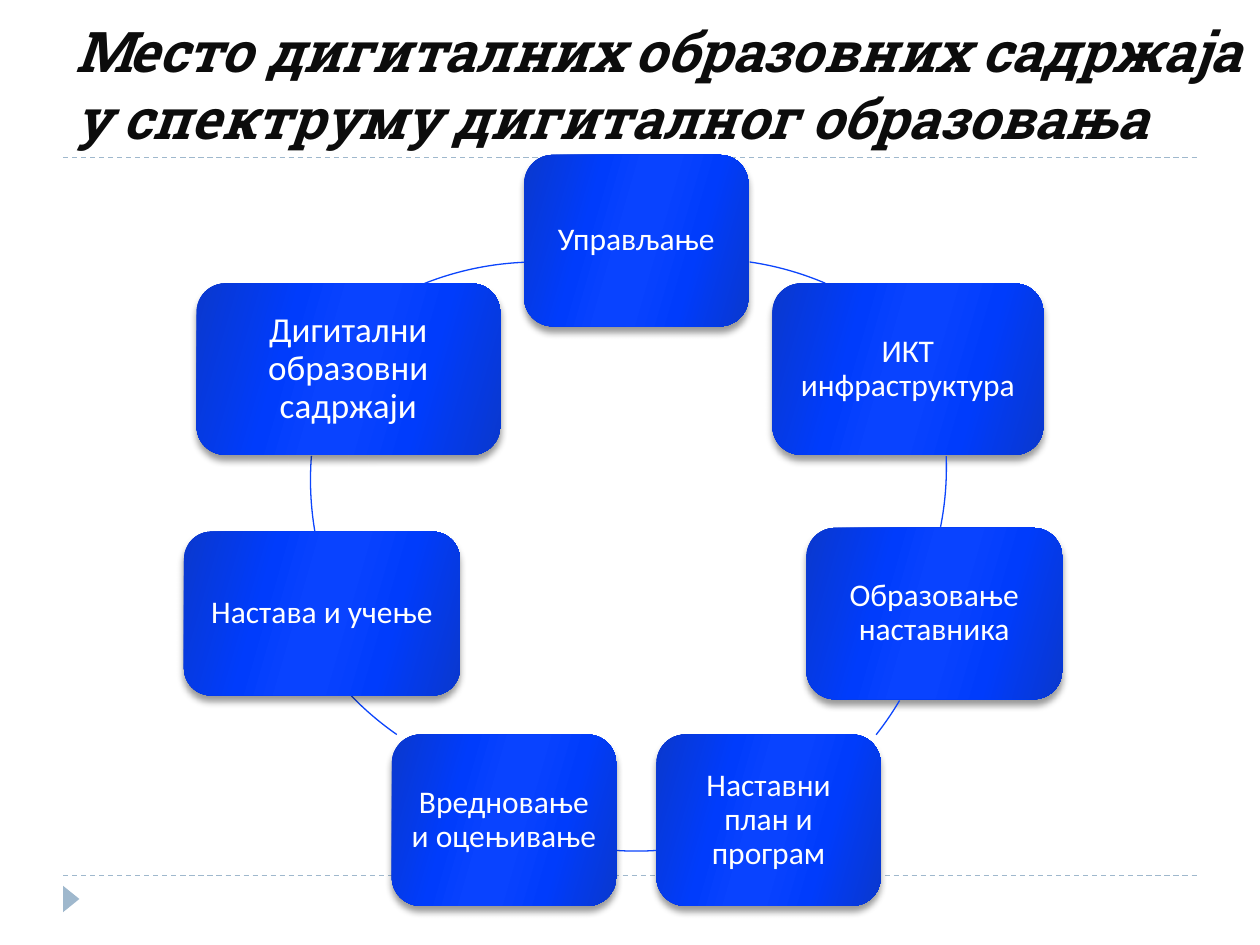
import math

from lxml import etree
from pptx import Presentation
from pptx.dml.color import RGBColor
from pptx.enum.dml import MSO_LINE
from pptx.enum.shapes import MSO_CONNECTOR, MSO_SHAPE
from pptx.enum.text import MSO_ANCHOR, MSO_AUTO_SIZE, PP_ALIGN
from pptx.oxml import parse_xml
from pptx.oxml.ns import nsdecls, qn
from pptx.util import Inches, Pt

STRAIGHT = MSO_CONNECTOR.STRAIGHT
ROUNDED = MSO_SHAPE.ROUNDED_RECTANGLE
TRIANGLE = MSO_SHAPE.ISOSCELES_TRIANGLE
CENTER, LEFT = PP_ALIGN.CENTER, PP_ALIGN.LEFT
MIDDLE, BOTTOM = MSO_ANCHOR.MIDDLE, MSO_ANCHOR.BOTTOM

COLORS = {
    "rule": "9FB8CD",
    "title": "0C0C0C",
    "node_text": "FFFFFF",
    "arc": "0C45FC",
    "edge": "0A38CE",
    "band": "003CFC",
    "middle": "0943FF",
    "shadow": "000000",
}
GRADIENT = [(0, "edge"), (30, "band"), (45, "middle"),
            (55, "middle"), (73, "band"), (100, "edge")]
GRADIENT_ANGLE = 16
RADIUS = 2.42
DEGREE = 60000  # angle units in DrawingML

# Text, box (left, top, width, height), font size
NODES = [
    ("Управљање", (4.16, 1.23, 1.78, 1.36), 18),
    ("ИКТ инфраструктура", (6.13, 2.25, 2.15, 1.36), 18),
    ("Образовање наставника", (6.4, 4.19, 2.03, 1.36), 18),
    ("Наставни план и програм", (5.21, 5.83, 1.78, 1.36), 18),
    ("Вредновање и оцењивање", (3.11, 5.83, 1.78, 1.36), 18),
    ("Настава и учење", (1.46, 4.22, 2.19, 1.3), 18),
    ("Дигитални образовни садржаји", (1.56, 2.25, 2.41, 1.36), 20),
]
# Circle corner (left, top), start and end of each clockwise arc
ARCS = [
    ((3.18, 2.06), (5.95, 2.08), (6.55, 2.25)),
    ((2.68, 1.29), (7.51, 3.62), (7.47, 4.18)),
    ((2.63, 1.91), (7.14, 5.56), (6.95, 5.83)),
    ((2.63, 1.91), (5.21, 6.75), (4.89, 6.75)),
    ((2.11, 1.42), (3.15, 5.83), (2.79, 5.52)),
    ((2.46, 1.39), (2.5, 4.22), (2.47, 3.62)),
    ((1.84, 2.08), (3.37, 2.25), (4.16, 2.08)),
]


def color(name):
    return RGBColor.from_string(COLORS[name])


def style_run(paragraph, name, size, font_name):
    font = paragraph.runs[0].font
    font.name, font.size = font_name, Pt(size)
    font.color.rgb = color(name)
    return font


def add_frame(slide, left, right, rule_tops):
    """Dashed rules and the corner marker."""
    for top in rule_tops:
        rule = slide.shapes.add_connector(
            STRAIGHT, Inches(left), Inches(top), Inches(right), Inches(top))
        rule.line.color.rgb = color("rule")
        rule.line.width = Pt(0.75)
        rule.line.dash_style = MSO_LINE.DASH
        etree.SubElement(rule._element.spPr, qn("a:effectLst"))

    marker = slide.shapes.add_shape(
        TRIANGLE, Inches(0.46), Inches(7.07), Inches(0.21), Inches(0.13))
    marker.rotation = 90
    marker.shadow.inherit = False
    marker.fill.solid()
    marker.fill.fore_color.rgb = color("rule")
    marker.line.fill.background()


def add_title(slide, text, box):
    title = slide.shapes.title
    title.left, title.top, title.width, title.height = map(Inches, box)
    frame = title.text_frame
    frame.text = text
    frame.word_wrap = True
    frame.auto_size = MSO_AUTO_SIZE.NONE
    frame.vertical_anchor = BOTTOM
    paragraph = frame.paragraphs[0]
    paragraph.alignment = LEFT
    font = style_run(paragraph, "title", 32, "Roboto Slab")
    font.bold = font.italic = True


def set_gradient_and_shadow(shape):
    stops = "".join(
        f'<a:gs pos="{position * 1000}"><a:srgbClr val="{COLORS[name]}"/></a:gs>'
        for position, name in GRADIENT)
    gradient = parse_xml(
        f'<a:gradFill {nsdecls("a")} rotWithShape="1"><a:gsLst>{stops}</a:gsLst>'
        f'<a:lin ang="{GRADIENT_ANGLE * DEGREE}" scaled="0"/></a:gradFill>')
    shape._element.spPr.find(qn("a:prstGeom")).addnext(gradient)

    shape.shadow.inherit = False
    shadow = parse_xml(
        f'<a:outerShdw {nsdecls("a")} blurRad="{Pt(4)}" dist="{Pt(3.4)}" '
        f'dir="{90 * DEGREE}" rotWithShape="0"><a:srgbClr val="{COLORS["shadow"]}">'
        '<a:alpha val="40000"/></a:srgbClr></a:outerShdw>')
    shape._element.spPr.find(qn("a:effectLst")).append(shadow)


def add_node(slide, text, box, size):
    node = slide.shapes.add_shape(ROUNDED, *map(Inches, box))
    node.line.fill.background()
    set_gradient_and_shadow(node)
    frame = node.text_frame
    frame.text = text
    frame.word_wrap = True
    frame.vertical_anchor = MIDDLE
    frame.margin_left = frame.margin_right = Inches(0.07)
    frame.margin_top = frame.margin_bottom = Inches(0.07)
    paragraph = frame.paragraphs[0]
    paragraph.alignment = CENTER
    paragraph.line_spacing = 0.9
    style_run(paragraph, "node_text", size, "Calibri")


def add_arc(slide, corner, start, end):
    """Freeform framed by its whole circle, with one arc as its outline."""
    left, top = corner
    right, bottom = left + 2 * RADIUS, top + 2 * RADIUS
    builder = slide.shapes.build_freeform(Inches(left), Inches(top))
    builder.add_line_segments([(Inches(right), Inches(bottom))], close=False)
    arc = builder.convert_to_shape()

    first, last = (
        math.degrees(math.atan2(y - top - RADIUS, x - left - RADIUS)) % 360
        for x, y in (start, end))
    sweep = (last - first) % 360
    outline = arc._element.spPr.find(".//" + qn("a:path"))
    outline.set("fill", "none")
    for segment in list(outline):
        outline.remove(segment)
    move = etree.SubElement(outline, qn("a:moveTo"))
    etree.SubElement(move, qn("a:pt"), x=str(Inches(start[0] - left)),
                     y=str(Inches(start[1] - top)))
    etree.SubElement(outline, qn("a:arcTo"),
                     wR=str(Inches(RADIUS)), hR=str(Inches(RADIUS)),
                     stAng=str(round(first * DEGREE)),
                     swAng=str(round(sweep * DEGREE)))
    arc.shadow.inherit = False
    arc.fill.background()
    arc.line.color.rgb = color("arc")
    arc.line.width = Pt(0.75)


def add_cycle(slide):
    """Seven nodes, each followed by the arc to the next one."""
    for node, arc in zip(NODES, ARCS):
        add_node(slide, *node)
        add_arc(slide, *arc)


def main():
    presentation = Presentation()
    presentation.slide_width, presentation.slide_height = Inches(10), Inches(7.5)
    slide = presentation.slides.add_slide(presentation.slide_layouts[5])
    add_frame(slide, 0.5, 9.5, (6.95, 1.25))
    add_cycle(slide)
    add_title(
        slide,
        "Место дигиталних образовних садржаја у спектруму дигиталног образовања",
        (0.5, 0.17, 9.5, 1.08))
    presentation.save("out.pptx")


if __name__ == "__main__":
    main()
